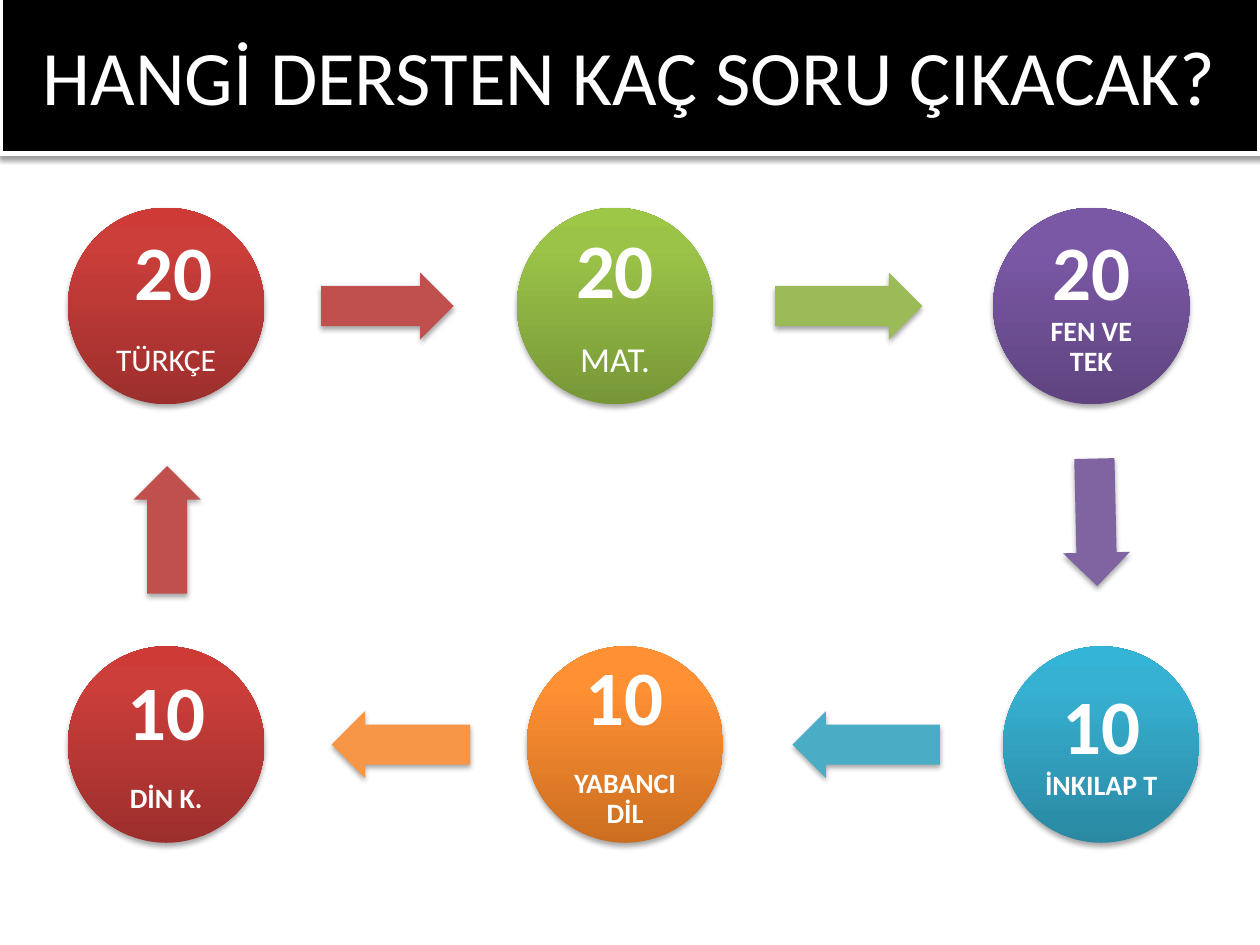
from lxml import etree
from pptx import Presentation
from pptx.dml.color import RGBColor
from pptx.enum.shapes import MSO_SHAPE
from pptx.enum.text import MSO_ANCHOR, MSO_AUTO_SIZE, PP_ALIGN
from pptx.oxml.ns import qn
from pptx.util import Cm, Pt

OVAL, ARROW = MSO_SHAPE.OVAL, MSO_SHAPE.RIGHT_ARROW
MIDDLE, CENTER, NO_FIT = MSO_ANCHOR.MIDDLE, PP_ALIGN.CENTER, MSO_AUTO_SIZE.NONE
FONT, WHITE, BLACK = "Calibri", "FFFFFF", "000000"
CIRCLE, LABEL, ARROW_HEIGHT = 3.96, 2.82, 1.35
TOP, BOTTOM = 6.17, 15.01

RED = ("9C2F2D", "CB3E3A", "CE3B37")
GREEN = ("779737", "9BC348", "9DC746")
PURPLE = ("5F4480", "7B58A6", "7C57A8")
TEAL = ("2A88A2", "37B1D2", "34B4D6")
ORANGE = ("CC6E20", "FF9034", "FF9136")

LESSONS = [
    (3.35, TOP, RED, [[(" ", 40, True), ("20", 44, True)], [("TÜRKÇE", 18, False)]]),
    (12.4, TOP, GREEN, [[("20", 44, True)], [("MAT.", 20, False)]]),
    (22, TOP, PURPLE, [[("20 ", 44, True), ("FEN VE TEK", 16, True)]]),
    (22.2, BOTTOM, TEAL, [[("10 ", 44, True), ("İNKILAP T", 16, True)]]),
    (12.6, BOTTOM, ORANGE, [[("10", 44, True)], [("YABANCI DİL", 16, True)]]),
    (3.35, BOTTOM, RED, [[("10", 44, True)], [("DİN K.", 16, True)]]),
]
ARROWS = [
    (7.81, TOP, 2.67, 0, "C0504D"),
    (17.11, TOP, 2.97, 0, "9BBB59"),
    (22.09, 10.53, 2.57, 88.7, "8064A2"),
    (17.46, BOTTOM, 2.97, 180, "4BACC6"),
    (8.08, BOTTOM, 2.79, 180, "F79646"),
    (3.37, 10.68, 2.57, 270, "C0504D"),
]


def color(value):
    """Turn a hex string into a colour."""
    return RGBColor.from_string(value)


def centered(x, y, width, height):
    """Return the box of a given size around a centre, in centimetres."""
    return [Cm(v) for v in (x - width / 2, y - height / 2, width, height)]


def add_shadow(shape, opacity, distance):
    """Give a shape a soft shadow that falls straight down."""
    shape.shadow.inherit = False
    effects = shape._element.spPr.find(qn("a:effectLst"))
    shadow = etree.SubElement(
        effects, qn("a:outerShdw"), blurRad=str(Pt(3.1)), dist=str(Pt(distance)),
        dir="5400000", rotWithShape="0")
    tone = etree.SubElement(shadow, qn("a:srgbClr"), val=BLACK)
    etree.SubElement(tone, qn("a:alpha"), val=str(opacity * 1000))


def fill_gradient(shape, tones):
    """Fill a shape with three tones rising from the bottom."""
    shape.fill.gradient()
    shape.fill.gradient_angle = 90
    stops = shape._element.spPr.find(".//" + qn("a:gsLst"))
    for stop in list(stops):
        stops.remove(stop)
    for position, tone in zip((0, 80, 100), tones):
        stop = etree.SubElement(stops, qn("a:gs"), pos=str(position * 1000))
        etree.SubElement(stop, qn("a:srgbClr"), val=tone)


def write(para, text, size=44, bold=False):
    """Add white text with its format to a centred paragraph."""
    para.alignment = CENTER
    span = para.add_run()
    span.text = text
    span.font.name = FONT
    span.font.size = Pt(size)
    span.font.bold = bold
    span.font.color.rgb = color(WHITE)


def add_heading(page, box):
    """Place and format the title banner."""
    title = page.shapes.title
    title.left, title.top, title.width, title.height = box
    title.fill.solid()
    title.fill.fore_color.rgb = color(BLACK)
    title.line.color.rgb = color(WHITE)
    title.line.width = Pt(3)
    add_shadow(title, 38, 1.6)
    frame = title.text_frame
    frame.auto_size = NO_FIT
    frame.vertical_anchor = MIDDLE
    write(frame.paragraphs[0], "HANGİ DERSTEN KAÇ SORU ÇIKACAK?")


def add_lesson(page, x, y, tones, lines):
    """Draw a circle with its question count and lesson name."""
    circle = page.shapes.add_shape(OVAL, *centered(x, y, CIRCLE, CIRCLE))
    fill_gradient(circle, tones)
    circle.line.fill.background()
    add_shadow(circle, 35, 1.8)
    frame = page.shapes.add_textbox(*centered(x, y, LABEL, LABEL)).text_frame
    frame.word_wrap = True
    frame.vertical_anchor = MIDDLE
    frame.margin_left = frame.margin_right = Cm(0.15)
    frame.margin_top = frame.margin_bottom = Cm(0.15)
    for index, spans in enumerate(lines):
        para = frame.add_paragraph() if index else frame.paragraphs[0]
        para.line_spacing = 0.9
        para.space_after = Pt(0.35 * max(size for _, size, _ in spans))
        for text, size, bold in spans:
            write(para, text, size=size, bold=bold)


def add_arrow(page, x, y, length, angle, tone):
    """Draw a block arrow turned around its centre."""
    arrow = page.shapes.add_shape(ARROW, *centered(x, y, length, ARROW_HEIGHT))
    arrow.adjustments[0] = 0.6
    arrow.adjustments[1] = 0.5
    arrow.rotation = angle
    arrow.fill.solid()
    arrow.fill.fore_color.rgb = color(tone)
    arrow.line.fill.background()
    add_shadow(arrow, 35, 1.8)


def main():
    """Build the slide and save it."""
    deck = Presentation()
    deck.slide_width, deck.slide_height = Cm(25.4), Cm(19.05)
    page = deck.slides.add_slide(deck.slide_layouts[5])
    add_heading(page, [Cm(v) for v in (0, -0.08, 25.4, 3.18)])
    for lesson, arrow in zip(LESSONS, ARROWS):
        add_lesson(page, *lesson)
        add_arrow(page, *arrow)
    deck.save("out.pptx")


if __name__ == "__main__":
    main()
